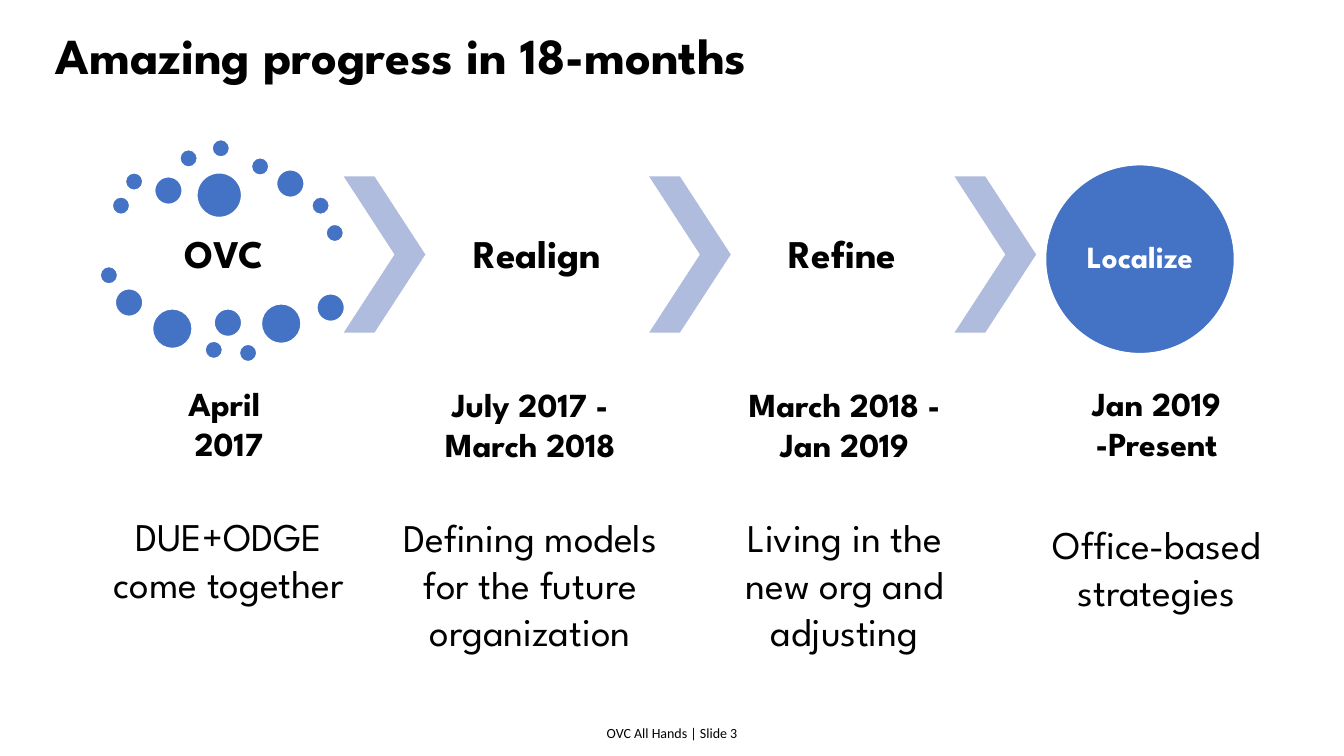
from pptx import Presentation
from pptx.dml.color import RGBColor
from pptx.enum.shapes import MSO_SHAPE
from pptx.enum.text import MSO_ANCHOR, MSO_AUTO_SIZE, PP_ALIGN
from pptx.util import Pt

COLORS = {"text": "000000", "blue": "4472C4", "pale": "B0BCDE", "white": "FFFFFF"}
HEAD_FONT = "League Spartan"
SMALL, MEDIUM, LARGE, HUGE = 13, 20.2, 28.8, 32.4
DOTS = [
    (8.6, 41, SMALL), (18, 23.8, SMALL), (38.9, 26.6, MEDIUM),
    (56.9, 7.2, SMALL), (79.9, 0, SMALL), (108, 13, SMALL),
    (126, 21.6, MEDIUM), (151.2, 41, SMALL), (161.3, 60.5, SMALL),
    (69.1, 23.8, HUGE), (0, 90.7, SMALL), (10.8, 106.6, MEDIUM),
    (37.4, 121, LARGE), (74.9, 144, SMALL), (81.4, 121, MEDIUM),
    (99.4, 146.2, SMALL), (115.2, 117.4, LARGE), (154.8, 110.2, MEDIUM),
]
PHASES = [
    ((68.4, 270, 190.1, 202.3), "April \v2017", "DUE+ODGE come together", 0),
    ((280.8, 270.7, 195.8, 236.2), "July 2017 -\vMarch 2018",
     "Defining models for the future organization", 0),
    ((508.3, 270.7, 190.1, 202.3), "March 2018 - Jan 2019",
     "Living in the new org and adjusting", 0),
    ((739.4, 270, 173.5, 208.1), "Jan 2019 -Present", "Office-based strategies", 6),
]


def rgb(name):
    return RGBColor.from_string(COLORS[name])


def set_font(p, size, bold=False, name=HEAD_FONT, color="text"):
    p.font.size = Pt(size)
    p.font.bold = bold
    p.font.name = name
    p.font.color.rgb = rgb(color)


def add_shape(s, kind, box, fill, outlined=False):
    sp = s.shapes.add_shape(kind, *map(Pt, box))
    sp.shadow.inherit = False
    sp.fill.solid()
    sp.fill.fore_color.rgb = rgb(fill)
    if outlined:
        sp.line.color.rgb = rgb("white")
        sp.line.width = Pt(1.5)
    else:
        sp.line.fill.background()
    return sp


def add_text_box(s, box):
    tf = s.shapes.add_textbox(*map(Pt, box)).text_frame
    tf.word_wrap = True
    return tf


def add_label(s, box, text, size=28, color="text", inset=2.9, spacing=0.9):
    tf = add_text_box(s, box)
    tf.vertical_anchor = MSO_ANCHOR.MIDDLE
    tf.margin_left = tf.margin_right = tf.margin_top = tf.margin_bottom = Pt(inset)
    p = tf.paragraphs[0]
    p.text = text
    p.alignment = PP_ALIGN.CENTER
    p.line_spacing = spacing
    set_font(p, size, True, color=color)


def add_title(s, box):
    sp = s.shapes.title
    sp.left, sp.top, sp.width, sp.height = map(Pt, box)
    tf = sp.text_frame
    tf.text = "Amazing progress in 18-months"
    tf.word_wrap = True
    tf.auto_size = MSO_AUTO_SIZE.NONE
    tf.vertical_anchor = MSO_ANCHOR.TOP
    p = tf.paragraphs[0]
    p.alignment = PP_ALIGN.LEFT
    set_font(p, 36, True)


def add_dot_ring(s, box):
    left, top, width, height = box
    add_label(s, (left + 9.4, top + 56.9, width - 16, 52.6), "OVC")
    for x, y, size in DOTS:
        add_shape(s, MSO_SHAPE.OVAL, (left + x, top + y, size, size), "blue", True)


def add_chevrons(s, box):
    left, top, width, height = box
    arrow_width = 58.3
    pitch = (width - arrow_width) / 2
    for i, text in enumerate(("Realign", "Refine", None)):
        x = left + i * pitch
        sp = add_shape(s, MSO_SHAPE.CHEVRON, (x, top, arrow_width, height), "pale")
        sp.adjustments[0] = 0.623
        if text:
            add_label(s, (x + arrow_width, top + 0.7, pitch - arrow_width, height), text)


def add_goal(s, box):
    left, top, width, height = box
    inset = 19.8
    add_shape(s, MSO_SHAPE.OVAL, box, "blue", True)
    add_label(s, (left + inset, top + inset, width - 2 * inset, height - 2 * inset),
              "Localize", 22, "white", 0, Pt(22.6))


def add_phase(s, box, dates, summary, extra_gap):
    tf = add_text_box(s, box)
    p = tf.paragraphs[0]
    p.text = dates
    p.alignment = PP_ALIGN.CENTER
    p.space_after = Pt(6)
    set_font(p, 24, True)
    p = tf.add_paragraph()
    p.text = summary
    p.alignment = PP_ALIGN.CENTER
    p.space_before = Pt(28.5 + extra_gap)
    set_font(p, 28)


def add_footer(s, box):
    p = add_text_box(s, box).paragraphs[0]
    p.text = "OVC All Hands | Slide 3"
    p.alignment = PP_ALIGN.CENTER
    set_font(p, 10, name="Calibri")


def main():
    prs = Presentation()
    prs.slide_width, prs.slide_height = Pt(960), Pt(540)
    s = prs.slides.add_slide(prs.slide_layouts[5])
    add_title(s, (32.4, 13.7, 900, 51.1))
    add_dot_ring(s, (71.3, 99.4, 175, 159.2))
    add_chevrons(s, (245.5, 126, 494.6, 111.6))
    add_goal(s, (746.6, 117.4, 135.4, 135.4))
    for phase in PHASES:
        add_phase(s, *phase)
    add_footer(s, (0, 514.1, 960, 19.4))
    prs.save("out.pptx")


if __name__ == "__main__":
    main()
